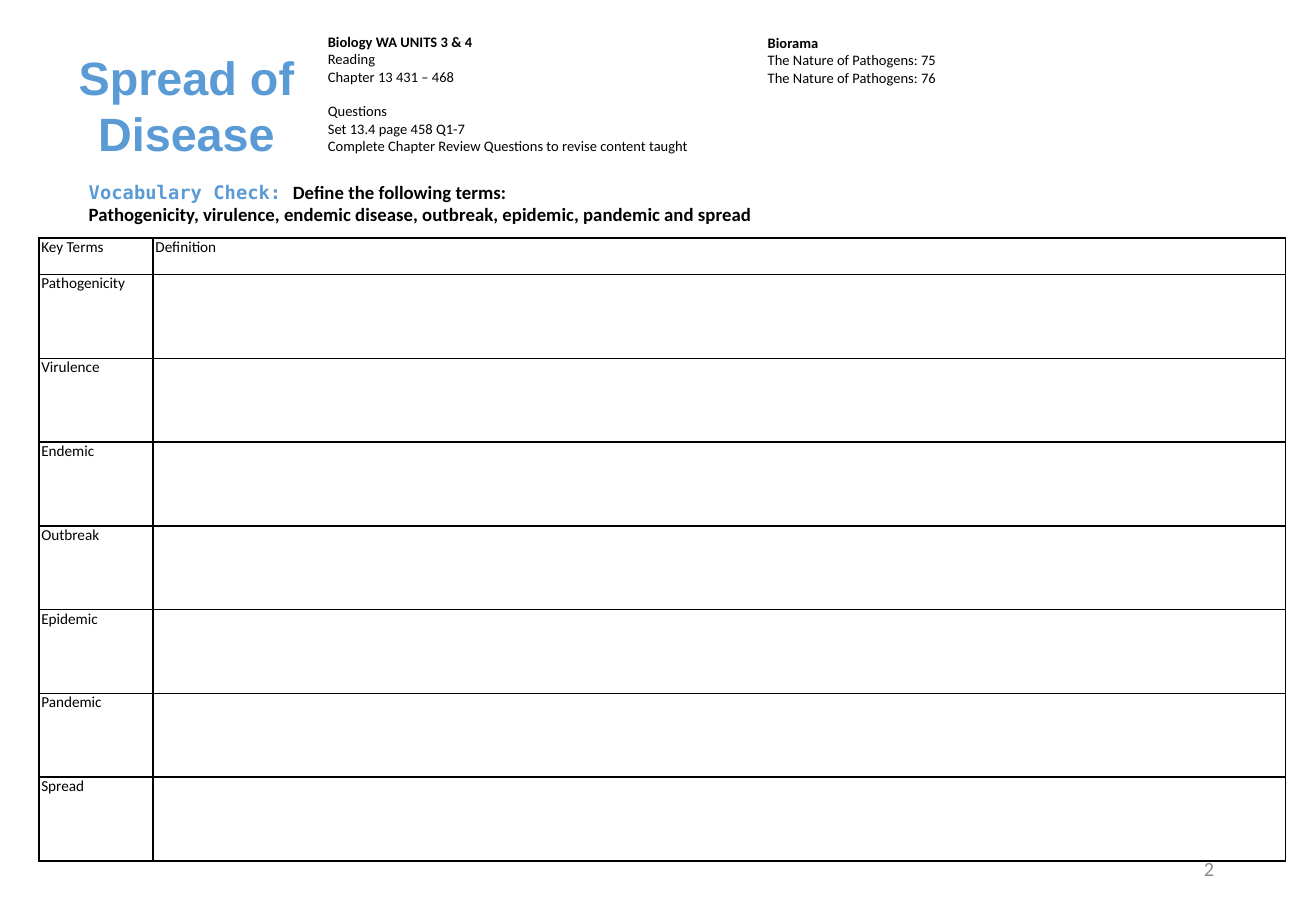
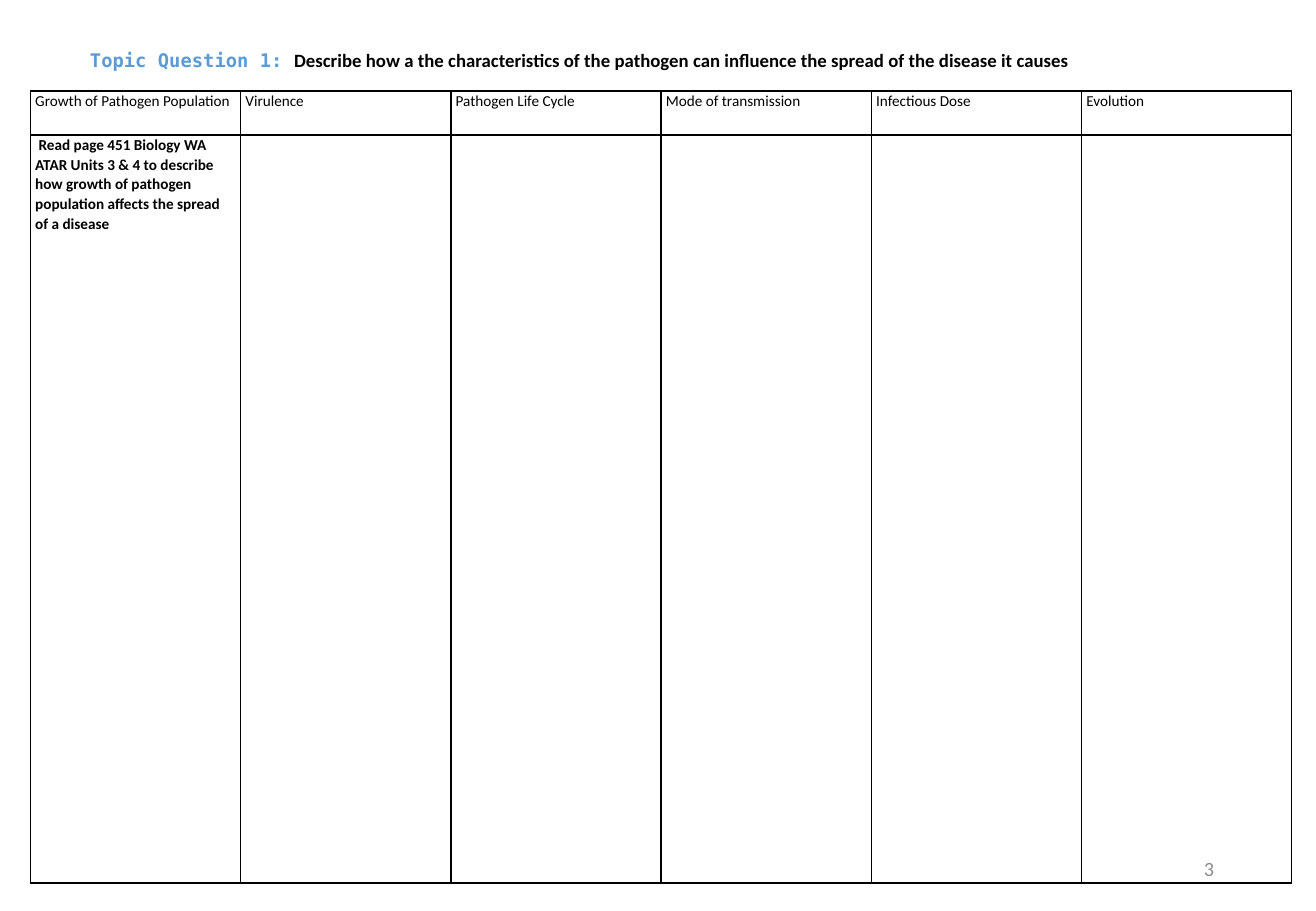
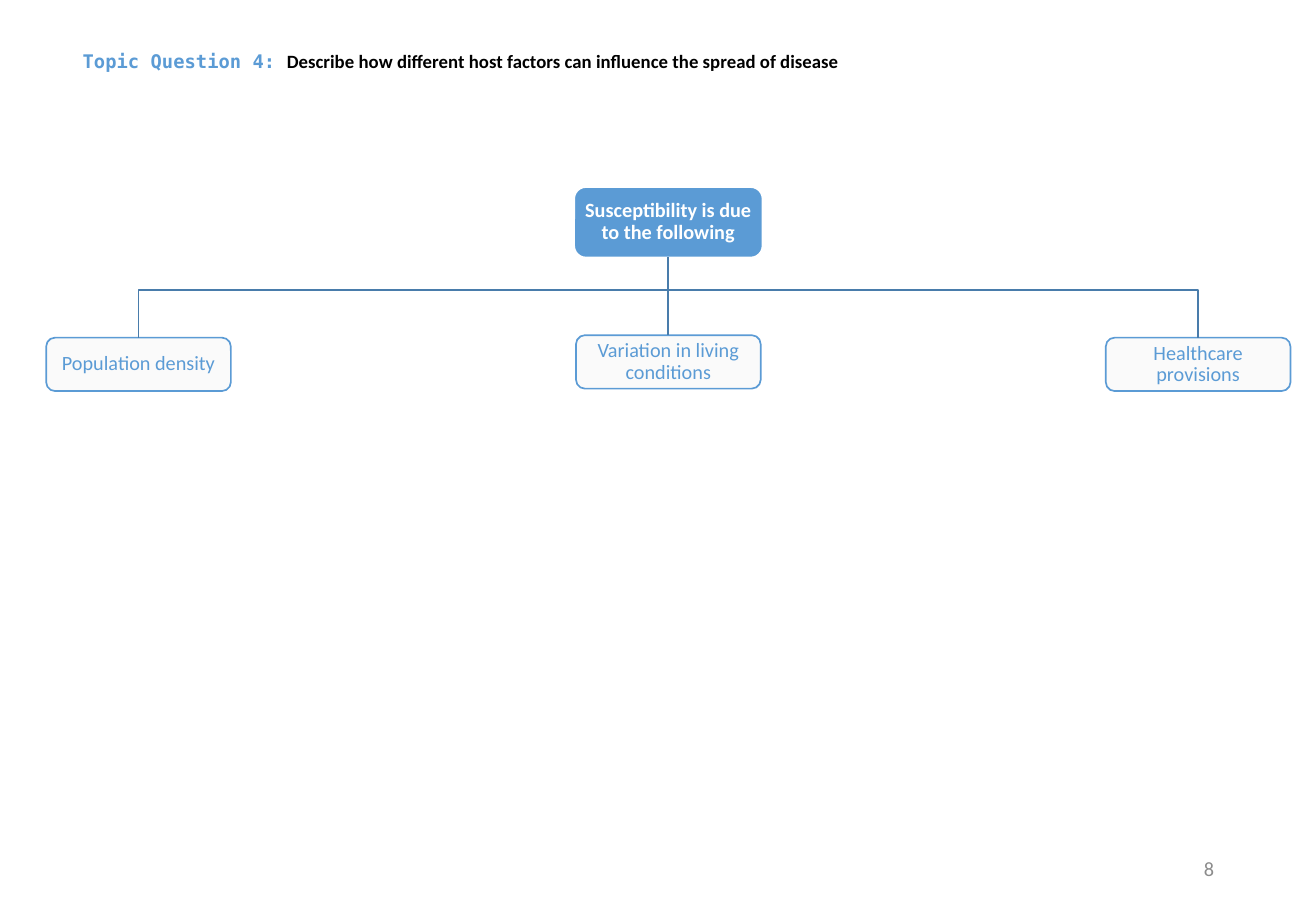
import pptx
import pptx.util
import pptx.dml.color
import pptx.enum.text
import pptx.enum.shapes
import pptx.oxml
import pptx.oxml.ns
import lxml.etree

Inches, Pt = pptx.util.Inches, pptx.util.Pt
Color = pptx.dml.color.RGBColor.from_string
Align = pptx.enum.text.PP_ALIGN
Anchor = pptx.enum.text.MSO_ANCHOR
Kind = pptx.enum.shapes.MSO_SHAPE
qn = pptx.oxml.ns.qn


class Theme:
    # Colours
    blue, ink, white = "5B9BD5", "000000", "FFFFFF"
    pale, wire, grey = "FAFAFA", "497CAB", "8C8C8C"
    # Fonts
    body, head, mono = "Calibri", "Arial", "DejaVu Sans Mono"
    # Type sizes and line width
    big, lead, cell, note, node = 27.7, 11.1, 9, 8.6, 12
    line = 1


# Text

def add_run(para, text, size, color=Theme.ink, font=Theme.body, bold=False):
    run = para.add_run()
    run.text = text
    run.font.size = Pt(size)
    run.font.name = font
    run.font.bold = bold
    run.font.color.rgb = Color(color)


def set_frame(frame, side, top, anchor):
    frame.word_wrap = True
    frame.auto_size = pptx.enum.text.MSO_AUTO_SIZE.NONE
    frame.vertical_anchor = anchor
    frame.margin_left = frame.margin_right = Inches(side)
    frame.margin_top = frame.margin_bottom = Inches(top)


def place(shape, box):
    shape.left, shape.top, shape.width, shape.height = map(Inches, box)


def add_box(slide, box, anchor=Anchor.TOP, side=0.1):
    frame = slide.shapes.add_textbox(*map(Inches, box)).text_frame
    set_frame(frame, side, 0.05, anchor)
    return frame


def add_title(slide, box, anchor, align):
    title = slide.shapes.title
    place(title, box)
    set_frame(title.text_frame, 0.09, 0.05, anchor)
    para = title.text_frame.paragraphs[0]
    para.alignment = align
    return para


def add_lead(para, label, text):
    add_run(para, label + " ", Theme.lead, Theme.blue, Theme.mono, True)
    add_run(para, text, Theme.lead, bold=True)


def add_topic(slide, box, label, text, space=1.0):
    para = add_title(slide, box, Anchor.MIDDLE, Align.LEFT)
    para.line_spacing = space
    add_lead(para, label, text)


def add_note(slide, box, head, groups):
    frame = add_box(slide, box)
    add_run(frame.paragraphs[0], head, Theme.note, bold=True)
    for i, group in enumerate(groups):
        for j, text in enumerate(group):
            para = frame.add_paragraph()
            if i and not j:
                para.space_before = Pt(10.4)
            add_run(para, text, Theme.note)


def add_page(slide, number):
    para = add_box(slide, (7.65, 6.95, 2.44, 0.4), Anchor.MIDDLE).paragraphs[0]
    para.alignment = Align.RIGHT
    add_run(para, str(number), Theme.node, Theme.grey)


# Tables

def set_edges(cell):
    props = cell._tc.get_or_add_tcPr()
    for side in ("lnL", "lnR", "lnT", "lnB"):
        edge = lxml.etree.SubElement(props, qn("a:" + side), w=str(Pt(Theme.line)))
        fill = lxml.etree.SubElement(edge, qn("a:solidFill"))
        lxml.etree.SubElement(fill, qn("a:srgbClr"), val=Theme.ink)


def add_grid(slide, spot, cols, rows, texts, side, space=1.0):
    """Texts maps (row, column) to a pair of wording and boldness."""
    size = (sum(cols), sum(rows))
    table = slide.shapes.add_table(
        len(rows), len(cols), *map(Inches, spot + size)).table
    table.first_row = table.horz_banding = False
    for col, width in zip(table.columns, cols):
        col.width = Inches(width)
    for i, height in enumerate(rows):
        table.rows[i].height = Inches(height)
        for j in range(len(cols)):
            cell = table.cell(i, j)
            cell.margin_left = cell.margin_right = Inches(side)
            cell.margin_top = cell.margin_bottom = 0
            set_edges(cell)
            cell.fill.background()
            if (i, j) in texts:
                text, bold = texts[i, j]
                para = cell.text_frame.paragraphs[0]
                para.line_spacing = space
                add_run(para, text, Theme.cell, bold=bold)


# Tree

def add_node(slide, mid, top, size, text, fill, edge, color, bold=False):
    width, height = size
    node = slide.shapes.add_shape(
        Kind.ROUNDED_RECTANGLE,
        *map(Inches, (mid - width / 2, top, width, height)))
    node.shadow.inherit = False
    node.fill.solid()
    node.fill.fore_color.rgb = Color(fill)
    node.line.color.rgb = Color(edge)
    node.line.width = Pt(Theme.line)
    set_frame(node.text_frame, 0.01, 0.01, Anchor.MIDDLE)
    para = node.text_frame.paragraphs[0]
    para.alignment = Align.CENTER
    para.line_spacing = 0.9
    add_run(para, text, Theme.node, color, bold=bold)
    return node


def set_wire(wire):
    wire.line.color.rgb = Color(Theme.wire)
    wire.line.width = Pt(Theme.line)


def add_stem(slide, top, foot):
    stem = slide.shapes.add_connector(
        pptx.enum.shapes.MSO_CONNECTOR.STRAIGHT, 0, 0, 0, 0)
    stem.begin_connect(top, 2)
    stem.end_connect(foot, 0)
    set_wire(stem)
    lxml.etree.SubElement(stem._element.spPr, qn("a:effectLst"))


def add_bend(slide, spots):
    first, *rest = [tuple(map(Inches, spot)) for spot in spots]
    pen = slide.shapes.build_freeform(*first)
    pen.add_line_segments(rest, close=False)
    bend = pen.convert_to_shape()
    bend.shadow.inherit = False
    bend.fill.background()
    set_wire(bend)


def add_tree(slide, root, leaves):
    mids = [1.14 + 4.36 * i for i in range(len(leaves))]
    tops = [2.78, 2.76, 2.78]
    hub, foot, bar = mids[1], 2.12, 2.39
    trunk = add_node(slide, hub, 1.54, (1.55, 0.58), root,
                     Theme.blue, Theme.white, Theme.white, True)
    for mid, top, text in zip(mids, tops, leaves):
        leaf = add_node(slide, mid, top, (1.52, 0.44), text,
                        Theme.pale, Theme.blue, Theme.blue)
        if mid == hub:
            add_stem(slide, trunk, leaf)
        else:
            add_bend(slide, [(hub, foot), (hub, bar), (mid, bar), (mid, top)])


# Slides

def add_vocab(slide):
    title = add_title(slide, (0.03, 0.35, 3.01, 0.79), Anchor.TOP, Align.CENTER)
    add_run(title, "Spread of Disease", Theme.big, Theme.blue, Theme.head, True)
    add_note(slide, (2.6, 0.22, 3.34, 1.11), "Biology WA UNITS 3 & 4", [
        ["Reading", "Chapter 13 431 – 468"],
        ["Questions", "Set 13.4 page 458 Q1-7",
         "Complete Chapter Review Questions to revise content taught"]])
    add_note(slide, (6.22, 0.23, 3.34, 0.53), "Biorama", [
        ["The Nature of Pathogens: 75", "The Nature of Pathogens: 76"]])
    frame = add_box(slide, (0.64, 1.37, 9.78, 0.6), Anchor.MIDDLE, 0.09)
    add_lead(frame.paragraphs[0], "Vocabulary Check:", "Define the following terms:")
    add_run(frame.add_paragraph(),
            "Pathogenicity, virulence, endemic disease, outbreak, epidemic, "
            "pandemic and spread", Theme.lead, bold=True)
    terms = ["Key Terms", "Pathogenicity", "Virulence", "Endemic", "Outbreak",
             "Epidemic", "Pandemic", "Spread"]
    texts = {(i, 0): (term, False) for i, term in enumerate(terms)}
    texts[0, 1] = ("Definition", False)
    add_grid(slide, (0.32, 1.96), [0.94, 9.32], [0.3] + [0.69] * 7, texts, 0.02)


def add_traits(slide):
    add_topic(slide, (0.65, 0.23, 9.32, 0.53), "Topic Question 1:",
              "Describe how a the characteristics of the pathogen can influence "
              "the spread of the disease it causes")
    heads = ["Growth of Pathogen Population", "Virulence", "Pathogen Life Cycle",
             "Mode of transmission", "Infectious Dose", "Evolution"]
    texts = {(0, j): (head, False) for j, head in enumerate(heads)}
    texts[1, 0] = (" Read page 451 Biology WA ATAR Units 3 & 4 to describe how "
                   "growth of pathogen population affects the spread of a disease",
                   True)
    add_grid(slide, (0.25, 0.75), [1.73] * 6, [0.36, 6.16], texts, 0.04, 1.07)


def add_hosts(slide):
    add_topic(slide, (0.59, 0.16, 9.41, 0.71), "Topic Question 4:",
              "Describe how different host factors can influence the spread of disease",
              0.9)
    add_tree(slide, "Susceptibility is due to the following",
             ["Population density", "Variation in living conditions",
              "Healthcare provisions"])


def main():
    deck = pptx.Presentation()
    deck.slide_width, deck.slide_height = Inches(10.83), Inches(7.5)
    for build, number in ((add_vocab, 2), (add_traits, 3), (add_hosts, 8)):
        slide = deck.slides.add_slide(deck.slide_layouts[5])
        build(slide)
        add_page(slide, number)
    deck.save("out.pptx")


if __name__ == "__main__":
    main()
